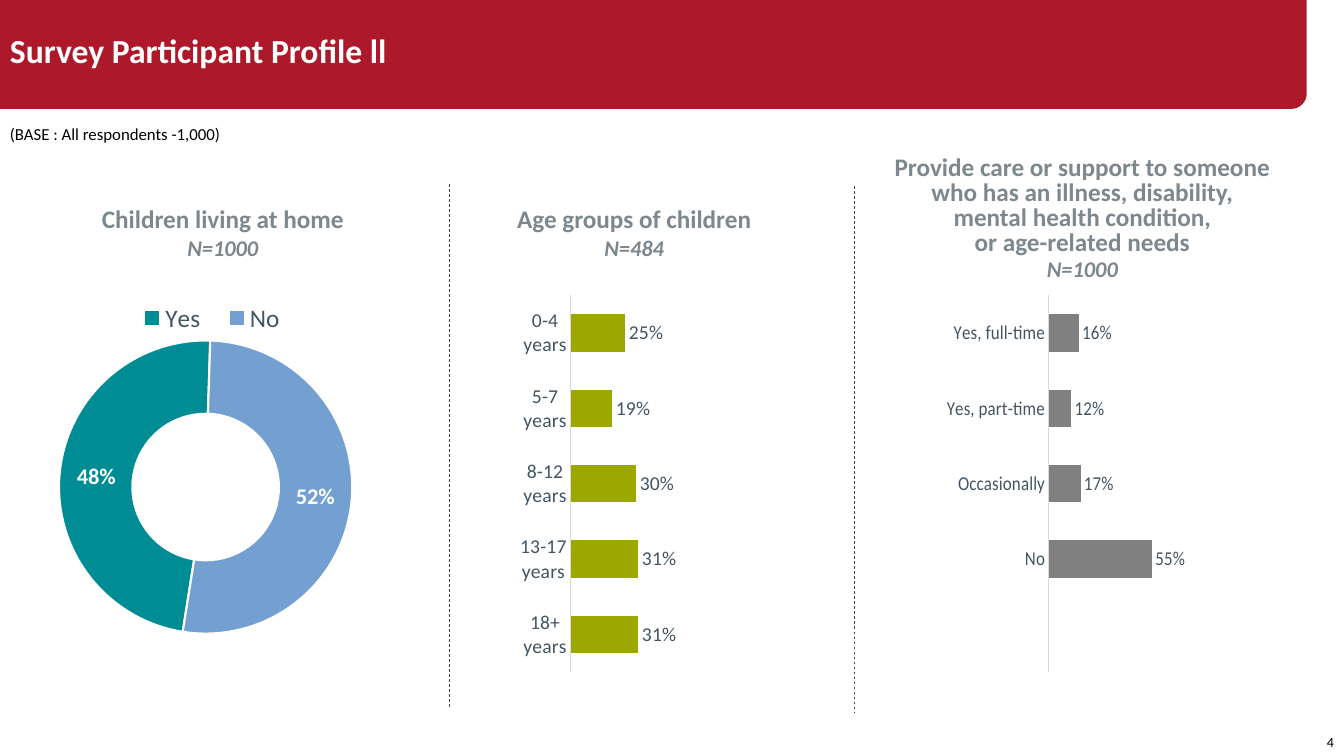
from math import cos, radians, sin

from lxml.etree import SubElement
from pptx import Presentation
from pptx.chart.data import CategoryChartData
from pptx.dml.color import RGBColor
from pptx.enum.chart import XL_CHART_TYPE as Kind, XL_LABEL_POSITION as LabelPlace
from pptx.enum.chart import XL_LEGEND_POSITION as LegendPlace, XL_TICK_MARK as Tick
from pptx.enum.dml import MSO_LINE
from pptx.enum.shapes import MSO_CONNECTOR
from pptx.enum.text import MSO_ANCHOR as Anchor, PP_ALIGN as Align
from pptx.oxml.ns import qn
from pptx.util import Pt

PX = 9144  # 100 px to the inch
FONT = "Calibri"
WHITE, BLACK, RED = "FFFFFF", "000000", "AD192B"
HEADING, LABEL, RULE, AXIS = "7C878E", "425563", "3E4447", "D9D9D9"
TEAL, BLUE, OLIVE, GREY = "008C95", "73A0D0", "9CA700", "808080"

color = RGBColor.from_string


def add_text(text, left, top, width, height, size=18, ink=BLACK, bold=False,
             align=Align.LEFT, anchor=Anchor.TOP, wrap=False, spacing=None, base=None):
    """Add a text box, one paragraph per line; base is a smaller italic last line."""
    box = page.shapes.add_textbox(left * PX, top * PX, width * PX, height * PX)
    frame = box.text_frame
    frame.word_wrap = wrap
    frame.vertical_anchor = anchor
    lines = [(line, size, False) for line in text.split("\n")]
    if base:
        lines.append((base, 16, True))
    for number, (line, points, italic) in enumerate(lines):
        para = frame.add_paragraph() if number else frame.paragraphs[0]
        para.alignment = align
        if spacing:
            para.line_spacing = Pt(spacing)
        span = para.add_run()
        span.text = line
        font = span.font
        font.name, font.size, font.bold, font.italic = FONT, Pt(points), bold, italic
        font.color.rgb = color(ink)


def set_layout(parent, index, **fractions):
    """Place a plot area or legend by fractions of its chart."""
    for old in parent.findall(qn("c:layout")):
        parent.remove(old)
    layout = SubElement(parent, qn("c:layout"))
    parent.insert(index, layout)
    manual = SubElement(layout, qn("c:manualLayout"))
    settings = {"layoutTarget": "inner"} if index == 0 else {}
    settings.update(xMode="edge", yMode="edge", **fractions)
    for tag, value in settings.items():
        SubElement(manual, qn("c:" + tag)).set("val", str(value))


deck = Presentation()
deck.slide_width, deck.slide_height = 1333 * PX, 750 * PX
page = deck.slides.add_slide(deck.slide_layouts[6])

# Header band with a rounded lower right corner
band_width, band_height, radius = 1296, 108, 15
corner = [(round((band_width - radius + radius * cos(radians(angle))) * PX),
           round((band_height - radius + radius * sin(radians(angle))) * PX))
          for angle in range(0, 91, 10)]
outline = page.shapes.build_freeform(0, 0)
outline.add_line_segments([(band_width * PX, 0), *corner, (0, band_height * PX)], close=True)
band = outline.convert_to_shape()
band.shadow.inherit = False
band.fill.solid()
band.fill.fore_color.rgb = color(RED)
band.line.fill.background()

add_text("Survey Participant Profile ll", 0, 0, 1081, 104, size=24, ink=WHITE, bold=True,
         anchor=Anchor.MIDDLE, wrap=True, spacing=25)
add_text("(BASE : All respondents -1,000)", 0, 118, 231, 30, size=12)
add_text("4", 1296, 723, 37, 27, size=10, align=Align.RIGHT, anchor=Anchor.MIDDLE)

# Column headings
care_heading = ("Provide care or support to someone\nwho has an illness, disability,\n"
                "mental health condition,\nor age-related needs")
for heading, base, left, top, width, height, spacing in [
        ("Children living at home", "N=1000", 90, 197, 262, 67, None),
        ("Age groups of children", "N=484", 502, 197, 254, 67, None),
        (care_heading, "N=1000", 873, 150, 401, 137, 18)]:
    add_text(heading, left, top, width, height, ink=HEADING, bold=True,
             align=Align.CENTER, spacing=spacing, base=base)

# Column dividers
for x, top, bottom in [(446, 183, 703), (847, 185, 706)]:
    divider = page.shapes.add_connector(MSO_CONNECTOR.STRAIGHT, x * PX, top * PX,
                                        x * PX, bottom * PX)
    divider.line.color.rgb = color(RULE)
    divider.line.width = Pt(0.5)
    divider.line.dash_style = MSO_LINE.DASH
    SubElement(divider._element.spPr, qn("a:effectLst"))

# Charts
ages = {"0-4 years": 0.25, "5-7 years": 0.19, "8-12 years": 0.3,
        "13-17 years": 0.31, "18+ years": 0.31}
care = {"Yes, full-time": 0.16, "Yes, part-time": 0.12, "Occasionally": 0.17,
        "No": 0.55, "": None}
for kind, values, left, top, width, height, fills, label_size, label_ink in [
        (Kind.DOUGHNUT, {"Yes": 0.48, "No": 0.52}, 42, 257, 324, 404, [TEAL, BLUE], 16, WHITE),
        (Kind.BAR_CLUSTERED, ages, 493, 281, 281, 398, [OLIVE], 14, LABEL),
        (Kind.BAR_CLUSTERED, care, 939, 281, 281, 398, [GREY], 14, LABEL)]:
    data = CategoryChartData(number_format="0%")
    data.categories = list(values)
    data.add_series("Series 1", list(values.values()))
    chart = page.shapes.add_chart(kind, left * PX, top * PX, width * PX, height * PX, data).chart
    chart.has_title = False
    chart.font.name, chart.font.size = FONT, Pt(14)
    chart.font.color.rgb = color(LABEL)
    plot = chart.plots[0]
    plot.vary_by_categories = kind == Kind.DOUGHNUT
    plot.has_data_labels = True
    labels = plot.data_labels
    labels.show_value, labels.show_percentage = True, False
    labels.number_format, labels.number_format_is_linked = "0%", False
    labels.font.name, labels.font.size = FONT, Pt(label_size)
    labels.font.bold = kind == Kind.DOUGHNUT
    labels.font.color.rgb = color(label_ink)
    series = plot.series[0]
    plot_area = chart._chartSpace.chart.plotArea

    if kind == Kind.DOUGHNUT:
        for index, fill in enumerate(fills):
            slice_format = series.points[index].format
            slice_format.fill.solid()
            slice_format.fill.fore_color.rgb = color(fill)
            slice_format.line.color.rgb = color(WHITE)
            slice_format.line.width = Pt(1.5)
        ring = plot_area.find(qn("c:doughnutChart"))
        ring.find(qn("c:firstSliceAng")).set("val", "189")
        ring.find(qn("c:holeSize")).set("val", "55")
        set_layout(plot_area, 0, x=0.05, y=0.2, w=0.9, h=0.72)
        chart.has_legend = True
        legend = chart.legend
        legend.position, legend.include_in_layout = LegendPlace.TOP, False
        legend.font.name, legend.font.size = FONT, Pt(18)
        legend.font.color.rgb = color(LABEL)
        set_layout(legend._element, 1, x=0.25, y=0.1, w=0.54, h=0.09)
    else:
        chart.has_legend = False
        plot.gap_width = 102
        labels.position = LabelPlace.OUTSIDE_END
        series.format.fill.solid()
        series.format.fill.fore_color.rgb = color(fills[0])
        answers, shares = chart.category_axis, chart.value_axis
        answers.reverse_order = True
        answers.major_tick_mark = Tick.NONE
        answers.format.line.color.rgb = color(AXIS)
        answers.format.line.width = Pt(0.75)
        shares.visible = shares.has_major_gridlines = False
        shares.minimum_scale, shares.maximum_scale = 0, 0.9
        set_layout(plot_area, 0, x=0.26, y=0.03, w=0.69, h=0.94)

deck.save("out.pptx")
